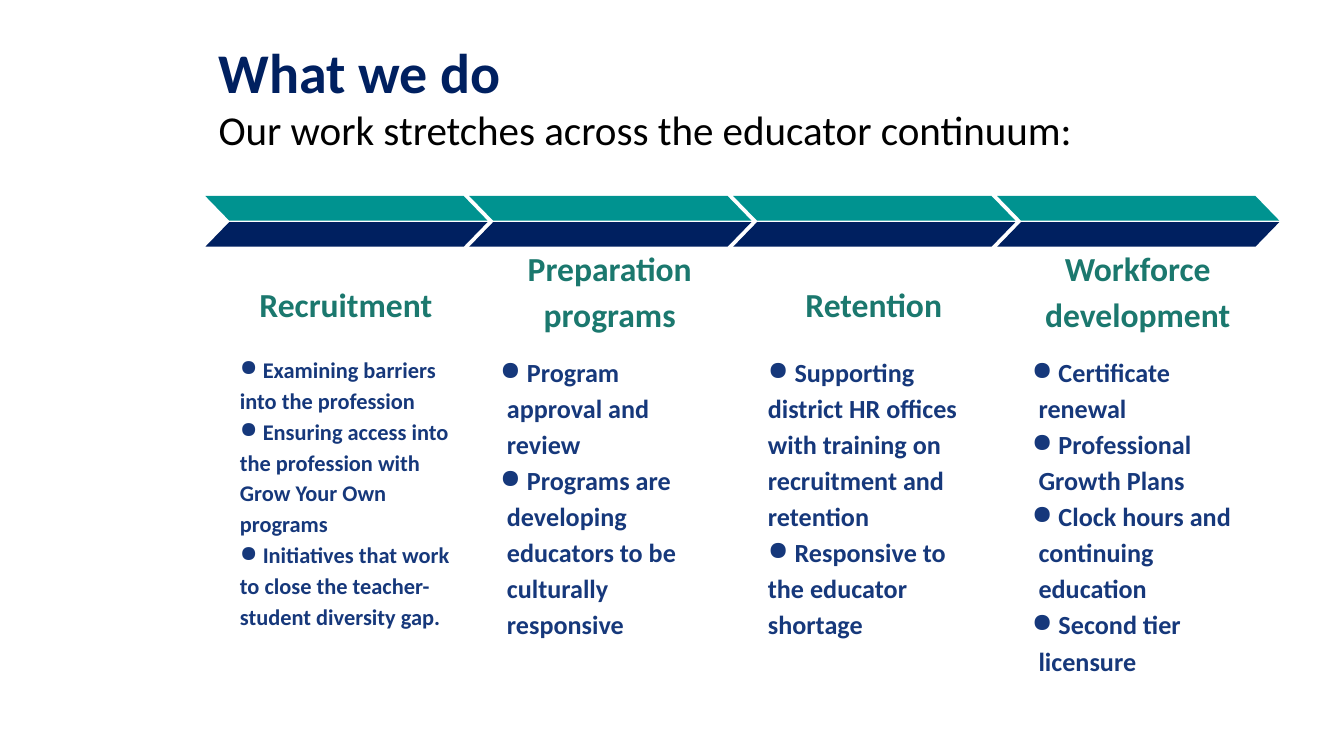
from lxml.etree import SubElement
from pptx import Presentation
from pptx.dml.color import RGBColor
from pptx.enum.shapes import MSO_SHAPE
from pptx.enum.text import MSO_ANCHOR, PP_ALIGN
from pptx.oxml.ns import qn
from pptx.util import Pt

COLORS = {
    "navy": "002060",
    "black": "000000",
    "teal": "009390",
    "green": "1B786E",
    "blue": "16387B",
}
LEFT, PITCH = 110, 141.4

# heading, heading top, body shift, body size, margin, hang, points
STAGES = [
    ("Recruitment", 140.4, 0, 12, 0, 5.8, [
        "Examining barriers into the profession",
        "Ensuring access into the profession with Grow Your Own programs",
        "Initiatives that work to close the teacher-student diversity gap.",
    ]),
    ("Preparation programs", 146.2, -2, 14, 3.6, 7.2, [
        "Program approval and review",
        "Programs are developing educators to be culturally responsive",
    ]),
    ("Retention", 140.4, 0, 14, 0, 7.2, [
        "Supporting district HR offices with training on recruitment "
        "and retention",
        "Responsive to the educator shortage",
    ]),
    ("Workforce development", 146.2, 0, 14, 3.6, 7.2, [
        "Certificate renewal",
        "Professional Growth Plans",
        "Clock hours and continuing education",
        "Second tier licensure",
    ]),
]


def color(name):
    return RGBColor.from_string(COLORS[name])


def write(para, text, size=14, tint="blue", bold=True, align=None,
          spacing=None, bullet=None):
    """Fill a paragraph; bullet is a (margin, hang) pair in points."""
    if bullet:
        margin, hang = bullet
        props = para._p.get_or_add_pPr()
        props.set("marL", str(Pt(margin)))
        props.set("indent", str(-Pt(hang)))
        mark = SubElement(props, qn("a:buClr"))
        SubElement(mark, qn("a:srgbClr"), val=COLORS[tint])
        SubElement(props, qn("a:buChar"), char="●")
    if align is not None:
        para.alignment = align
    if spacing:
        para.line_spacing = spacing
    run = para.add_run()
    run.text = text
    run.font.name = "Calibri"
    run.font.size = Pt(size)
    run.font.bold = bold
    run.font.color.rgb = color(tint)


class Deck:
    def __init__(self, width, height):
        self.show = Presentation()
        self.show.slide_width = Pt(width)
        self.show.slide_height = Pt(height)
        self.slide = self.show.slides.add_slide(self.show.slide_layouts[6])

    def text(self, x, y, w, h, lines, anchor=MSO_ANCHOR.TOP):
        """Add a box; lines are (text, format dict) pairs."""
        box = self.slide.shapes.add_textbox(Pt(x), Pt(y), Pt(w), Pt(h))
        frame = box.text_frame
        frame.word_wrap = True
        frame.vertical_anchor = anchor
        frame.margin_left = frame.margin_right = Pt(7.2)
        frame.margin_top = frame.margin_bottom = Pt(7.2)
        for i, (text, style) in enumerate(lines):
            para = frame.add_paragraph() if i else frame.paragraphs[0]
            write(para, text, **style)

    def slant(self, x, y, tint, flip=False):
        """Add one half of an arrow band."""
        bar = self.slide.shapes.add_shape(
            MSO_SHAPE.PARALLELOGRAM, Pt(x), Pt(y), Pt(151.2), Pt(13.2))
        bar.adjustments[0] = 0.97
        bar.shadow.inherit = False
        bar.fill.solid()
        bar.fill.fore_color.rgb = color(tint)
        bar.line.fill.background()
        if flip:
            bar._element.spPr.xfrm.set("flipH", "1")

    def stage(self, x, head, top, shift, size, margin, hang, points):
        self.slant(x, 105, "teal", flip=True)
        self.slant(x, 119, "navy")
        style = dict(size=18, tint="green", align=PP_ALIGN.CENTER,
                     spacing=1.15)
        self.text(x + 13, top, 124.6, 40.3, [(head, style)],
                  MSO_ANCHOR.BOTTOM)
        style = dict(size=size, spacing=1.15, bullet=(margin, hang))
        self.text(x + 11.5 + shift, 181.4, 127.4, 67,
                  [(" " + point, style) for point in points])


def main():
    deck = Deck(720, 405)
    deck.text(LEFT, 13, 591, 67, [
        ("What we do", dict(size=30, tint="navy")),
        ("Our work stretches across the educator continuum:",
         dict(size=22, tint="black", bold=False)),
    ])
    for i, stage in enumerate(STAGES):
        deck.stage(LEFT + i * PITCH, *stage)
    deck.show.save("out.pptx")


if __name__ == "__main__":
    main()
